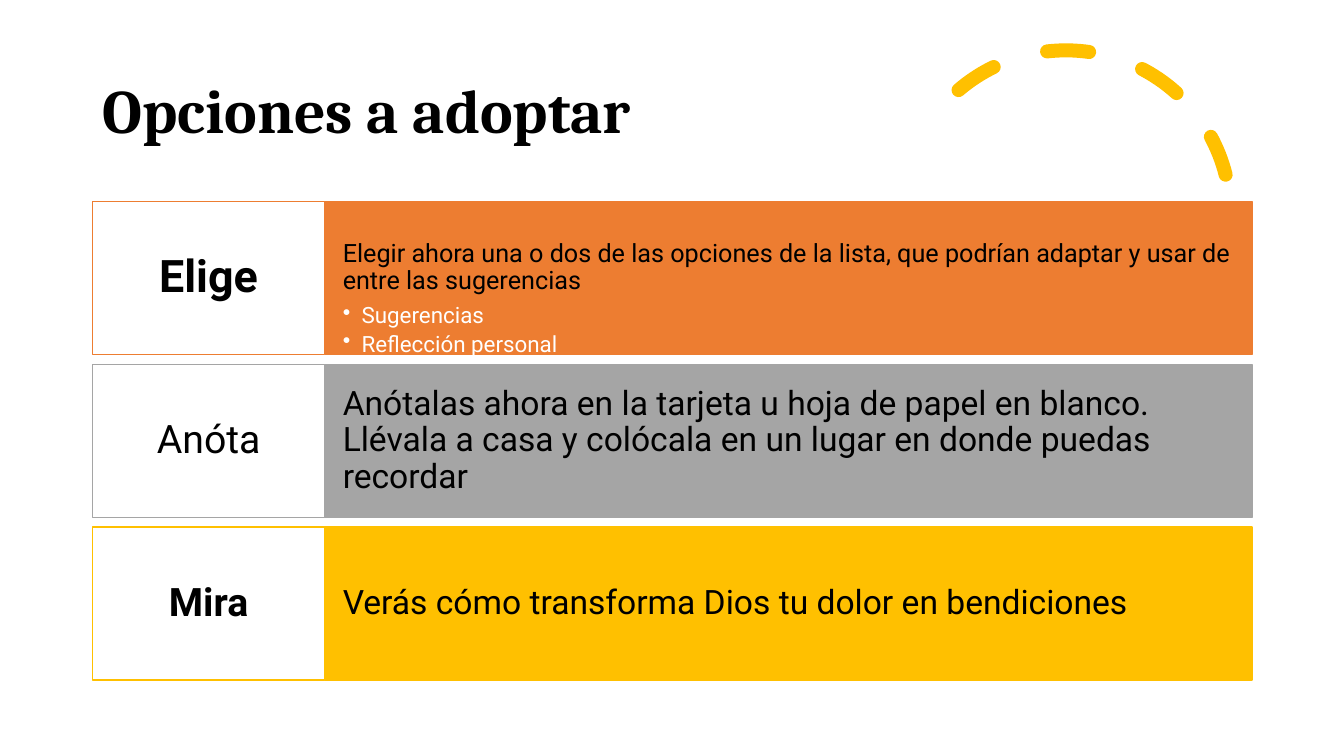
from lxml import etree
from pptx import Presentation
from pptx import util as u
from pptx.dml import color
from pptx.enum import dml, shapes, text
from pptx.oxml import ns

LEFT, LABEL_WIDTH, BAND_WIDTH = 66.24, 165.6, 662.4
FIRST_TOP, ROW_HEIGHT, ROW_PITCH = 144, 109.44, 116.2

# label, label size, label bold, colour, statement, statement size, bullets
ROWS = [
    ("Elige", 32, True, "ED7D31",
     "Elegir ahora una o dos de las opciones de la lista, que podrían adaptar "
     "y usar de entre las sugerencias", 18,
     ["Sugerencias", "Reflección personal"]),
    ("Anóta", 28, False, "A5A5A5",
     "Anótalas ahora en la tarjeta u hoja de papel en blanco. Llévala a casa "
     "y colócala en un lugar en donde puedas recordar", 24, []),
    ("Mira", 28, True, "FFC000",
     "Verás cómo transforma Dios tu dolor en bendiciones", 24, []),
]


def rgb(value):
    return color.RGBColor.from_string(value)


def write(paragraph, content, size, ink="000000", name="Roboto", bold=False,
          align=text.PP_ALIGN.LEFT, after=0):
    paragraph.text = content
    paragraph.alignment = align
    paragraph.line_spacing = 0.9
    paragraph.space_after = u.Pt(after)
    font = paragraph.font
    font.size, font.name, font.bold = u.Pt(size), name, bold
    font.color.rgb = rgb(ink)


def add_bullet(paragraph):
    properties = paragraph._p.get_or_add_pPr()
    properties.set("marL", str(u.Pt(13.5)))
    properties.set("indent", str(u.Pt(-13.5)))
    etree.SubElement(properties, ns.qn("a:buChar")).set("char", "•")


def add_box(slide, left, top, width, fill, line, margin_x, margin_y,
            anchor=text.MSO_ANCHOR.MIDDLE):
    box = slide.shapes.add_shape(shapes.MSO_SHAPE.RECTANGLE, u.Pt(left), u.Pt(top),
                                 u.Pt(width), u.Pt(ROW_HEIGHT))
    box.shadow.inherit = False
    box.fill.solid()
    box.fill.fore_color.rgb = rgb(fill)
    box.line.color.rgb = rgb(line)
    box.line.width = u.Pt(1)
    frame = box.text_frame
    frame.word_wrap = True
    frame.vertical_anchor = anchor
    frame.margin_left = frame.margin_right = u.Pt(margin_x)
    frame.margin_top = frame.margin_bottom = u.Pt(margin_y)
    return frame


def add_row(slide, top, label, label_size, bold, fill, statement, size, bullets):
    # Coloured band with the statement and its bullets
    anchor = text.MSO_ANCHOR.TOP if bullets else text.MSO_ANCHOR.MIDDLE
    band = add_box(slide, LEFT + LABEL_WIDTH, top, BAND_WIDTH, fill, fill, 13, 28, anchor)
    write(band.paragraphs[0], statement, size, after=6.5 if bullets else 0)
    for bullet in bullets:
        paragraph = band.add_paragraph()
        paragraph.level = 1
        add_bullet(paragraph)
        write(paragraph, bullet, 16, "FFFFFF", after=3)

    # White label cell
    cell = add_box(slide, LEFT, top, LABEL_WIDTH, "FFFFFF", fill, 8.64, 10.8)
    write(cell.paragraphs[0], label, label_size, bold=bold, align=text.PP_ALIGN.CENTER)


def add_dashed_arc(slide):
    arc = slide.shapes.add_shape(shapes.MSO_SHAPE.ARC, u.Pt(643.7), u.Pt(36),
                                 u.Pt(235.4), u.Pt(235.4))
    arc.shadow.inherit = False
    arc.adjustments[0] = 146.13
    arc.adjustments[1] = 0
    arc.rotation = 345.8
    arc.fill.background()
    arc.line.color.rgb = rgb("FFC000")
    arc.line.width = u.Pt(10)
    arc.line.dash_style = dml.MSO_LINE.DASH
    arc.line._get_or_add_ln().set("cap", "rnd")


def add_title(slide, content):
    title = slide.shapes.add_textbox(u.Pt(LEFT), u.Pt(28.8), u.Pt(828), u.Pt(104.4))
    frame = title.text_frame
    frame.word_wrap = True
    frame.vertical_anchor = text.MSO_ANCHOR.MIDDLE
    write(frame.paragraphs[0], content, 44, name="Cambria", bold=True)


def main():
    presentation = Presentation()
    presentation.slide_width, presentation.slide_height = u.Pt(960), u.Pt(540)
    slide = presentation.slides.add_slide(presentation.slide_layouts[6])

    # Heading
    add_dashed_arc(slide)
    add_title(slide, "Opciones a adoptar")

    # Three options
    for index, row in enumerate(ROWS):
        add_row(slide, FIRST_TOP + index * ROW_PITCH, *row)

    presentation.save("out.pptx")


if __name__ == "__main__":
    main()
